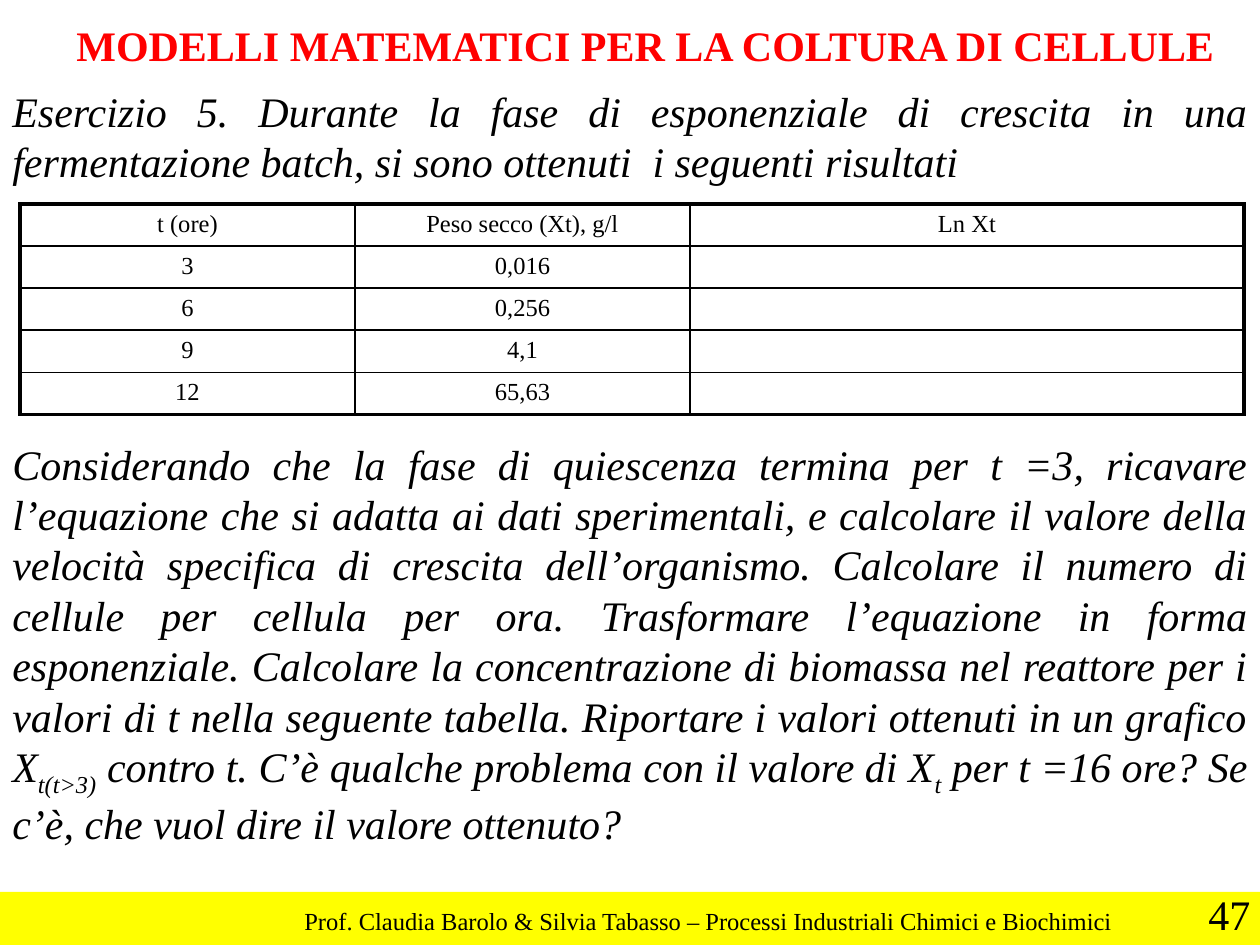
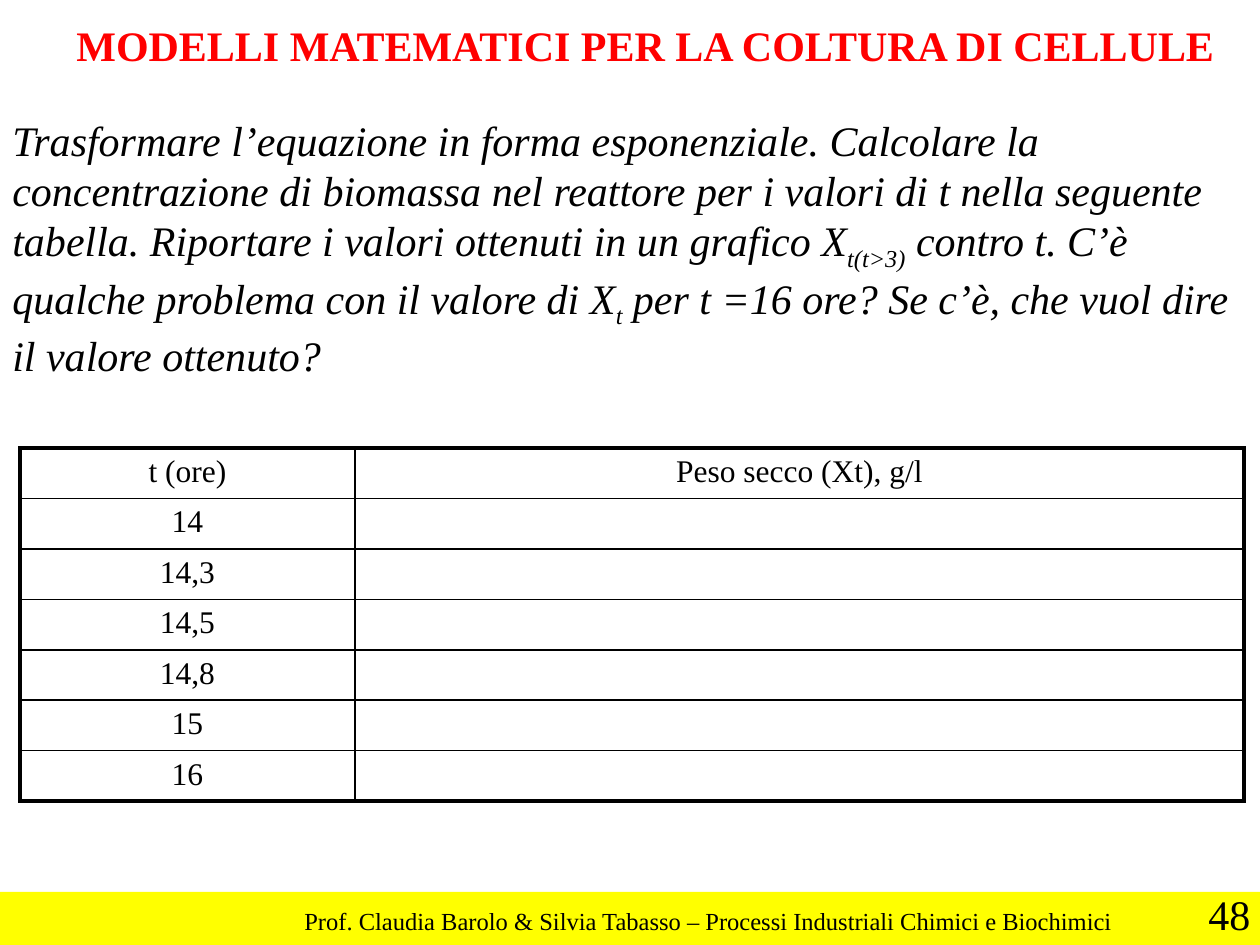
"""Build two exercise slides on mathematical models for cell culture."""
import dataclasses
import typing

import lxml.etree
import pptx
import pptx.dml.color
import pptx.enum.shapes
import pptx.enum.text
import pptx.oxml.ns
import pptx.slide
import pptx.table
import pptx.util

EMU_PER_PX = 914400 / 126
ALIGN = pptx.enum.text.PP_ALIGN


@dataclasses.dataclass(frozen=True)
class Theme:
    font: str = "Times New Roman"
    ink: str = "000000"
    title: str = "FF0000"
    band: str = "FFFF00"
    large: int = 24
    medium: int = 18
    small: int = 14
    frame_line: float = 2.25
    grid_line: float = 1


THEME = Theme()


class Area(typing.NamedTuple):
    left: int
    top: int
    width: int
    height: int


class Span(typing.NamedTuple):
    text: str
    subscript: bool = False


@dataclasses.dataclass(frozen=True)
class TextBlock:
    area: Area
    spans: tuple[Span, ...]
    size: int = THEME.large
    color: str = THEME.ink
    bold: bool = False
    italic: bool = False
    wrap: bool = False
    align: ALIGN = ALIGN.LEFT


@dataclasses.dataclass(frozen=True)
class DataTable:
    left: int
    top: int
    columns: tuple[int, ...]
    row_height: int
    size: int
    rows: tuple[tuple[str, ...], ...]


@dataclasses.dataclass(frozen=True)
class ExercisePage:
    number: int
    texts: tuple[TextBlock, ...]
    table: DataTable


SLIDE = Area(0, 0, 1260, 945)
BAND = Area(0, 892, 1260, 53)
NUMBER_AREA = Area(1196, 882, 67, 63)
TITLE = TextBlock(
    Area(64, 13, 1179, 63),
    (Span("MODELLI MATEMATICI PER LA COLTURA DI CELLULE"),),
    color=THEME.title, bold=True)
FOOTER = TextBlock(
    Area(292, 900, 845, 43),
    (Span("Prof. Claudia Barolo & Silvia Tabasso – Processi Industriali Chimici e Biochimici"),),
    size=THEME.small)

TRANSFORM_TASK = (
    "Trasformare l’equazione in forma esponenziale. Calcolare la concentrazione "
    "di biomassa nel reattore per i valori di t nella seguente tabella. "
    "Riportare i valori ottenuti in un grafico X")
PLOT_QUESTION = (
    Span("t(t>3)", subscript=True),
    Span(" contro t. C’è qualche problema con il valore di X"),
    Span("t", subscript=True),
    Span(" per t =16 ore? Se c’è, che vuol dire il valore ottenuto?"))
GROWTH_TASK = (
    "Considerando che la fase di quiescenza termina per t =3, ricavare l’equazione "
    "che si adatta ai dati sperimentali, e calcolare il valore della velocità "
    "specifica di crescita dell’organismo. Calcolare il numero di cellule per "
    "cellula per ora. ")
INTRODUCTION = (
    "Esercizio 5. Durante la fase di esponenziale di crescita in una fermentazione "
    "batch, si sono ottenuti  i seguenti risultati")


def body(top: int, height: int, spans: tuple[Span, ...], align: ALIGN) -> TextBlock:
    """Describe an italic full-width body text."""
    return TextBlock(Area(0, top, SLIDE.width, height), spans,
                     italic=True, wrap=True, align=align)


PAGES = (
    ExercisePage(
        47,
        (body(79, 113, (Span(INTRODUCTION),), ALIGN.JUSTIFY),
         body(432, 431, (Span(GROWTH_TASK + TRANSFORM_TASK), *PLOT_QUESTION), ALIGN.JUSTIFY)),
        DataTable(20, 204, (335, 335, 554), 42, THEME.small, (
            ("t (ore)", "Peso secco (Xt), g/l", "Ln Xt"),
            ("3", "0,016", ""),
            ("6", "0,256", ""),
            ("9", "4,1", ""),
            ("12", "65,63", "")))),
    ExercisePage(
        48,
        (body(108, 265, (Span(TRANSFORM_TASK), *PLOT_QUESTION), ALIGN.LEFT),),
        DataTable(20, 448, (335, 889), 50, THEME.medium, (
            ("t (ore)", "Peso secco (Xt), g/l"),
            *((hours, "") for hours in ("14", "14,3", "14,5", "14,8", "15", "16"))))),
)


def emu(px: int) -> pptx.util.Emu:
    """Convert pixels to EMU."""
    return pptx.util.Emu(round(px * EMU_PER_PX))


def place(area: Area) -> tuple[pptx.util.Emu, ...]:
    """Convert an area to EMU lengths."""
    return tuple(emu(px) for px in area)


def rgb(color: str) -> pptx.dml.color.RGBColor:
    """Read a hexadecimal colour."""
    return pptx.dml.color.RGBColor.from_string(color)


def add_run(para: typing.Any, text: str, size: int, color: str = THEME.ink) -> typing.Any:
    """Add a run in the theme font and return its font."""
    span = para.add_run()
    span.text = text
    span.font.name = THEME.font
    span.font.size = pptx.util.Pt(size)
    span.font.color.rgb = rgb(color)
    return span.font


def draw_text(page: pptx.slide.Slide, block: TextBlock) -> None:
    """Draw one text block."""
    box = page.shapes.add_textbox(*place(block.area))
    box.text_frame.word_wrap = block.wrap
    para = box.text_frame.paragraphs[0]
    para.alignment = block.align
    for piece in block.spans:
        font = add_run(para, piece.text, block.size, block.color)
        font.bold = block.bold
        font.italic = block.italic
        if piece.subscript:
            font._element.set("baseline", "-25000")


def draw_border(cell: pptx.table._Cell, side: str, width: float) -> None:
    """Draw one solid border of a cell."""
    properties = cell._tc.get_or_add_tcPr()
    line = lxml.etree.SubElement(properties, pptx.oxml.ns.qn(f"a:ln{side}"),
                                 w=str(pptx.util.Pt(width)))
    fill = lxml.etree.SubElement(line, pptx.oxml.ns.qn("a:solidFill"))
    lxml.etree.SubElement(fill, pptx.oxml.ns.qn("a:srgbClr"), val=THEME.ink)


def draw_table(page: pptx.slide.Slide, data: DataTable) -> None:
    """Draw a table with a heavy frame and a light grid."""
    area = Area(data.left, data.top, sum(data.columns), data.row_height * len(data.rows))
    table = page.shapes.add_table(len(data.rows), len(data.columns), *place(area)).table
    table.first_row = table.horz_banding = False
    for column, width in zip(table.columns, data.columns):
        column.width = emu(width)
    last_row, last_column = len(data.rows) - 1, len(data.columns) - 1
    for row_index, texts in enumerate(data.rows):
        table.rows[row_index].height = emu(data.row_height)
        for column_index, text in enumerate(texts):
            cell = table.cell(row_index, column_index)
            on_frame = {"L": column_index == 0, "R": column_index == last_column,
                        "T": row_index == 0, "B": row_index == last_row}
            for side, framed in on_frame.items():
                draw_border(cell, side, THEME.frame_line if framed else THEME.grid_line)
            cell.fill.background()
            para = cell.text_frame.paragraphs[0]
            para.alignment = ALIGN.CENTER
            if text:
                add_run(para, text, data.size)
            else:
                para._p.get_or_add_endParaRPr().set("sz", str(data.size * 100))


def draw_frame(page: pptx.slide.Slide, number: int) -> None:
    """Draw the band, footer, title and page number."""
    band = page.shapes.add_shape(pptx.enum.shapes.MSO_SHAPE.RECTANGLE, *place(BAND))
    band.shadow.inherit = False
    band.fill.solid()
    band.fill.fore_color.rgb = rgb(THEME.band)
    band.line.fill.background()
    for block in (FOOTER, TITLE, TextBlock(NUMBER_AREA, (Span(str(number)),))):
        draw_text(page, block)


def main() -> None:
    """Build and save the deck."""
    deck = pptx.Presentation()
    deck.slide_width, deck.slide_height = emu(SLIDE.width), emu(SLIDE.height)
    for exercise in PAGES:
        page = deck.slides.add_slide(deck.slide_layouts[6])
        draw_frame(page, exercise.number)
        for block in exercise.texts:
            draw_text(page, block)
        draw_table(page, exercise.table)
    deck.save("out.pptx")


if __name__ == "__main__":
    main()
